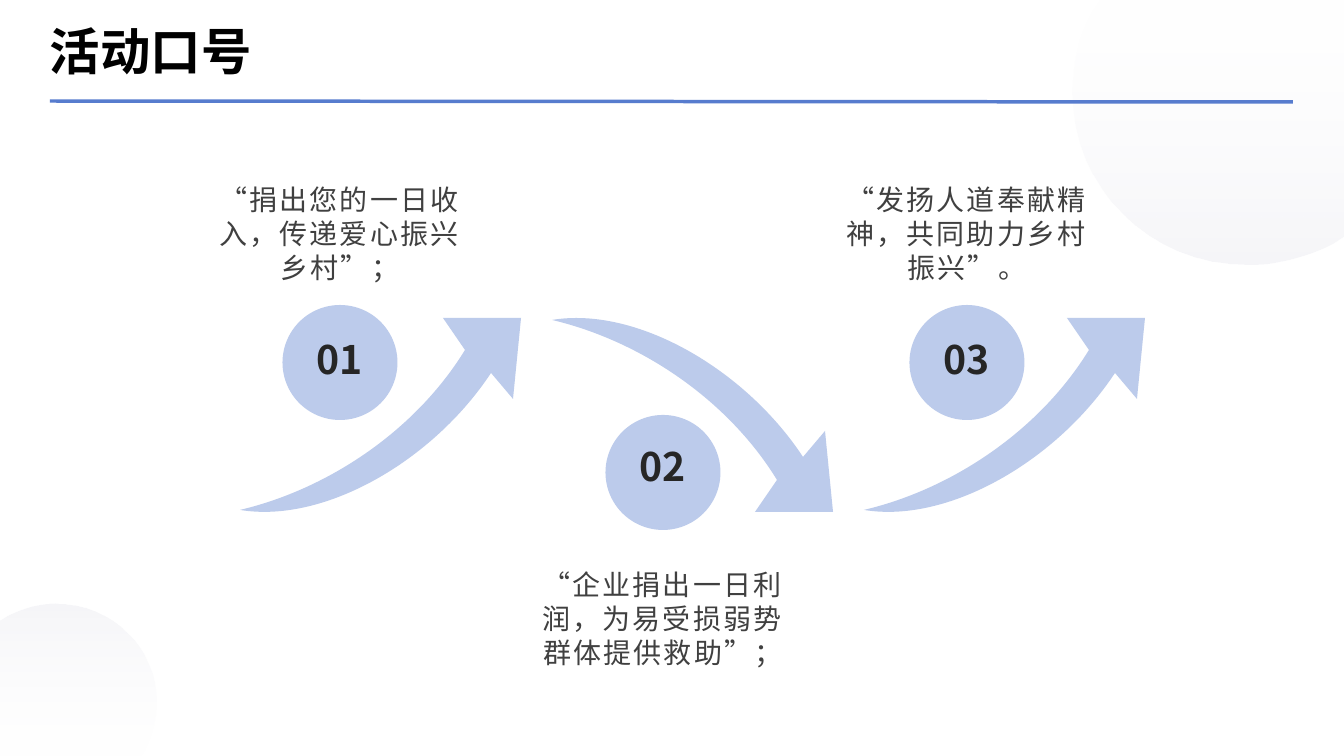
from lxml.etree import SubElement
from pptx import Presentation
from pptx.dml.color import RGBColor
from pptx.enum.shapes import MSO_CONNECTOR, MSO_SHAPE
from pptx.enum.text import MSO_ANCHOR, PP_ALIGN
from pptx.oxml.ns import qn
from pptx.util import Pt

PX = 914400 / 100.8
WIDE, HIGH = 1344, 756
FONT = "Noto Sans CJK SC"
BLACK = RGBColor(0x00, 0x00, 0x00)
DARK = RGBColor(0x26, 0x26, 0x26)
GREY = RGBColor(0x40, 0x40, 0x40)
BLUE = RGBColor(0x57, 0x7C, 0xCE)
PALE = RGBColor(0xBC, 0xCB, 0xEB)
WHITE = RGBColor(0xFF, 0xFF, 0xFF)
MIST = RGBColor(0xD8, 0xD8, 0xE4)

TITLE = "活动口号"
SLOGANS = [
    {"label": "01", "text": "“捐出您的一日收入，传递爱心振兴乡村”；",
     "mid": 340, "disc": 305, "num": 321, "top": 178, "flip": False},
    {"label": "02", "text": "“企业捐出一日利润，为易受损弱势群体提供救助”；",
     "mid": 663, "disc": 415, "num": 428, "top": 563, "flip": True},
    {"label": "03", "text": "“发扬人道奉献精神，共同助力乡村振兴”。",
     "mid": 967, "disc": 305, "num": 321, "top": 178, "flip": False},
]

BLOBS = [
    (270, [(1101, 0), (1344, 0), (1344, 236), (1331, 244),
           (1305, 257, 1277, 265, 1247, 265),
           (1150, 265, 1073, 188, 1073, 93),
           (1073, 64, 1079, 35, 1094, 11)]),
    (90, [(140, 756), (0, 756), (0, 621), (8, 616),
          (22, 609, 38, 604, 55, 604),
          (111, 604, 156, 649, 156, 703),
          (156, 717, 151, 736, 144, 750)]),
]
ARROW = [(0, 192), (89, 171, 176, 112, 225, 32), (203, 0), (281, 0),
         (273, 81), (251, 55), (193, 143, 84, 206, 0, 192)]
LEFT, TOP, TALL, STEP = 240, 318, 194, 312
DISC, NUM_W, NUM_H, CAP_W, CAP_H = 115, 143, 91, 281, 115


def px(n):
    return round(n * PX)


def outline(parts, x=0, y=0):
    spots = [[px(v + (x, y)[k % 2]) for k, v in enumerate(part)]
             for part in parts]
    pen = slide.shapes.build_freeform(*spots[0])
    pen.add_line_segments([s[-2:] for s in spots[1:]], close=True)
    shape = pen.convert_to_shape()
    lines = list(shape._element.iter(qn("a:lnTo")))
    for line, spot in zip(lines, spots[1:]):
        if len(spot) == 6:
            line.tag = qn("a:cubicBezTo")
            for old in list(line):
                line.remove(old)
            for px_x, px_y in zip(spot[::2], spot[1::2]):
                dot = SubElement(line, qn("a:pt"))
                dot.set("x", str(px_x - shape.left))
                dot.set("y", str(px_y - shape.top))
    return shape


def plain(shape):
    shape.shadow.inherit = False
    shape.line.fill.background()


def paint(shape, color):
    plain(shape)
    shape.fill.solid()
    shape.fill.fore_color.rgb = color


def fade(shape, angle):
    plain(shape)
    shape.fill.gradient()
    shape.fill.gradient_angle = angle
    for stop, color in zip(shape.fill.gradient_stops, (WHITE, MIST)):
        stop.color.rgb = color
    tags = shape._element.spPr.iter(qn("a:srgbClr"))
    for tag, alpha in zip(tags, (10, 24)):
        SubElement(tag, qn("a:alpha")).set("val", str(alpha * 1000))


def write(text, x, y, w, h, size, color, bold=False, align=PP_ALIGN.CENTER,
          anchor=MSO_ANCHOR.TOP, inset=(10, 5), space=None, track=0):
    box = slide.shapes.add_textbox(px(x), px(y), px(w), px(h))
    frame = box.text_frame
    frame.word_wrap = True
    frame.vertical_anchor = anchor
    frame.margin_left = frame.margin_right = px(inset[0])
    frame.margin_top = frame.margin_bottom = px(inset[1])
    para = frame.paragraphs[0]
    para.alignment = align
    para.line_spacing = space
    run = para.add_run()
    run.text = text
    run.font.size = Pt(size)
    run.font.bold = bold
    run.font.name = FONT
    run.font.color.rgb = color
    props = run.font._element
    SubElement(props, qn("a:ea")).set("typeface", FONT)
    if track:
        props.set("spc", str(track))


deck = Presentation()
deck.slide_width, deck.slide_height = px(WIDE), px(HIGH)
slide = deck.slides.add_slide(deck.slide_layouts[6])

for angle, parts in BLOBS:
    fade(outline(parts), angle)

rule = slide.shapes.add_connector(MSO_CONNECTOR.STRAIGHT,
                                  px(50), px(101), px(1293), px(102))
rule.line.color.rgb = BLUE
rule.line.width = Pt(2.5)
SubElement(rule._element.spPr, qn("a:effectLst"))
write(TITLE, 50, 16, 1243, 68, size=36, color=BLACK, bold=True,
      align=PP_ALIGN.LEFT, anchor=MSO_ANCHOR.MIDDLE, inset=(0, 0))

for i, item in enumerate(SLOGANS):
    arrow = outline(ARROW, LEFT + i * STEP, TOP)
    arrow.height = px(TALL)
    for track in arrow._element.iter(qn("a:path")):
        track.set("h", str(px(TALL)))
    if item["flip"]:
        arrow._element.spPr.find(qn("a:xfrm")).set("flipV", "1")
    paint(arrow, PALE)

for item in SLOGANS:
    mid = item["mid"]
    disc = slide.shapes.add_shape(MSO_SHAPE.OVAL, px(mid - DISC / 2),
                                  px(item["disc"]), px(DISC), px(DISC))
    paint(disc, PALE)
    write(item["label"], mid - NUM_W / 2, item["num"], NUM_W, NUM_H, size=28,
          color=DARK, bold=True, space=1.2)

for item in SLOGANS:
    write(item["text"], item["mid"] - CAP_W / 2, item["top"], CAP_W, CAP_H,
          size=20, color=GREY, track=150)

deck.save("out.pptx")
